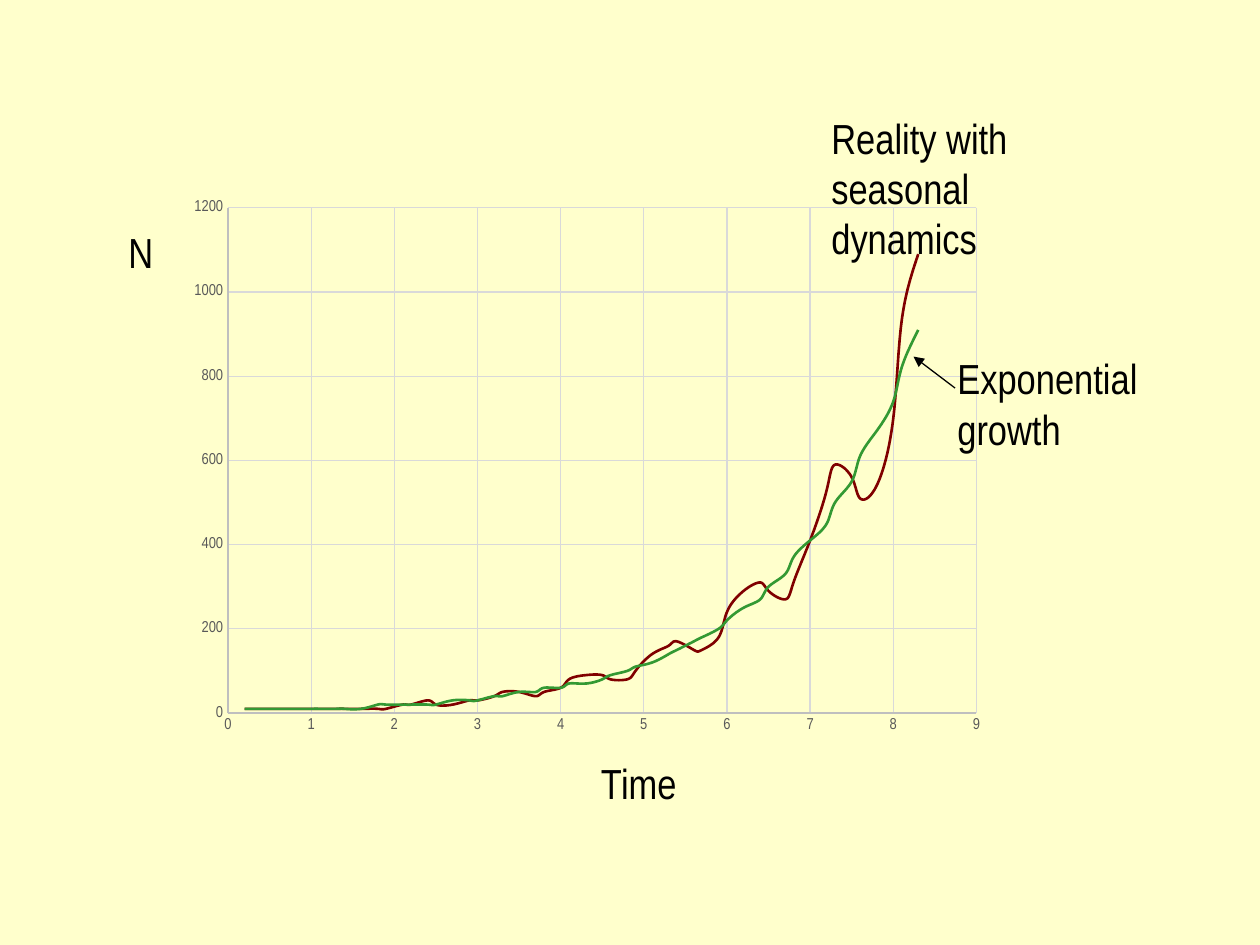
from dataclasses import dataclass
from math import exp, pi, sin

from lxml.etree import SubElement
from pptx import Presentation
from pptx.chart.data import XyChartData
from pptx.dml.color import RGBColor
from pptx.enum.chart import XL_CHART_TYPE, XL_TICK_LABEL_POSITION, XL_TICK_MARK
from pptx.enum.shapes import MSO_CONNECTOR
from pptx.enum.text import MSO_AUTO_SIZE
from pptx.oxml.ns import qn
from pptx.util import Inches, Pt

CREAM = RGBColor(0xFF, 0xFF, 0xCC)
BLACK = RGBColor(0x00, 0x00, 0x00)
GREEN = RGBColor(0x33, 0x99, 0x33)
MAROON = RGBColor(0x80, 0x00, 0x00)
TICK_GRAY = RGBColor(0x59, 0x59, 0x59)
AXIS_GRAY = RGBColor(0xBF, 0xBF, 0xBF)
GRID_GRAY = RGBColor(0xD9, 0xD9, 0xD9)
FONT_NAME = "Arial Narrow"

STEPS = range(1, 53)
START_SIZE = 5
SEASONAL_SWING = 0.2
CHART_WIDTH, CHART_HEIGHT = 6.5, 4.42
PLOT_AREA = {
    "x": 0.39 / CHART_WIDTH,
    "y": 0.15 / CHART_HEIGHT,
    "w": 5.94 / CHART_WIDTH,
    "h": 4.01 / CHART_HEIGHT,
}


@dataclass(frozen=True)
class Label:
    text: str
    left: float
    top: float
    width: float
    height: float


@dataclass(frozen=True)
class Curve:
    name: str
    swing: float
    color: RGBColor


LABELS = [
    Label("Time", 4.67, 5.96, 2.83, 0.5),
    Label("N", 0.92, 1.75, 0.5, 0.5),
    Label("Exponential growth", 7.5, 2.75, 2.08, 0.91),
    Label("Reality with seasonal dynamics", 6.5, 0.84, 2.5, 1.31),
]
CURVES = [
    Curve("Series 1", 0, GREEN),
    Curve("Series 2", SEASONAL_SWING, MAROON),
]


def apply_format(target, values: dict) -> None:
    for attribute, value in values.items():
        setattr(target, attribute, value)


def format_font(font, size: float, color: RGBColor) -> None:
    apply_format(font, {"name": FONT_NAME, "size": Pt(size)})
    font.color.rgb = color


def format_line(line, color: RGBColor, width: float) -> None:
    line.color.rgb = color
    line.width = Pt(width)


def format_axis(axis, maximum: float, unit: float) -> None:
    apply_format(axis, {
        "minimum_scale": 0,
        "maximum_scale": maximum,
        "major_unit": unit,
        "has_title": False,
        "has_major_gridlines": True,
        "major_tick_mark": XL_TICK_MARK.NONE,
        "minor_tick_mark": XL_TICK_MARK.NONE,
        "tick_label_position": XL_TICK_LABEL_POSITION.NEXT_TO_AXIS,
    })
    format_font(axis.tick_labels.font, 9, TICK_GRAY)
    format_line(axis.format.line, AXIS_GRAY, 0.75)
    format_line(axis.major_gridlines.format.line, GRID_GRAY, 0.75)


def place_plot_area(chart) -> None:
    plot_area = chart.plots[0]._element.getparent()
    layout = plot_area.find(qn("c:layout"))
    if layout is None:
        layout = SubElement(plot_area, qn("c:layout"))
        plot_area.insert(0, layout)
    manual = SubElement(layout, qn("c:manualLayout"))
    settings = {"layoutTarget": "inner", "xMode": "edge", "yMode": "edge", **PLOT_AREA}
    for tag, value in settings.items():
        SubElement(manual, qn(f"c:{tag}")).set("val", str(value))


def add_growth_chart(slide) -> None:
    growth = XyChartData()
    for curve in CURVES:
        points = growth.add_series(curve.name)
        for step in STEPS:
            size = START_SIZE * exp(step / 10) * (1 + curve.swing * sin(step))
            points.add_data_point(round(step / (2 * pi), 1), int(round(size, -1)))
    chart = slide.shapes.add_chart(
        XL_CHART_TYPE.XY_SCATTER_SMOOTH_NO_MARKERS,
        Inches(1.42), Inches(1.5), Inches(CHART_WIDTH), Inches(CHART_HEIGHT), growth,
    ).chart
    apply_format(chart, {"has_legend": False, "has_title": False})
    format_font(chart.font, 10, BLACK)
    chart.plots[0].vary_by_categories = False
    for series, curve in zip(chart.plots[0].series, CURVES):
        format_line(series.format.line, curve.color, 1.5)
        series._element.get_or_add_smooth().val = True
    format_axis(chart.category_axis, 9, 1)
    format_axis(chart.value_axis, 1200, 200)
    place_plot_area(chart)


def add_label(slide, label: Label) -> None:
    frame = slide.shapes.add_textbox(
        Inches(label.left), Inches(label.top), Inches(label.width), Inches(label.height)
    ).text_frame
    apply_format(frame, {"word_wrap": True, "auto_size": MSO_AUTO_SIZE.SHAPE_TO_FIT_TEXT})
    run = frame.paragraphs[0].add_run()
    run.text = label.text
    format_font(run.font, 24, BLACK)


def add_pointer(slide) -> None:
    pointer = slide.shapes.add_connector(
        MSO_CONNECTOR.STRAIGHT, Inches(7.58), Inches(3.08), Inches(7.25), Inches(2.83)
    )
    format_line(pointer.line, BLACK, 0.75)
    SubElement(pointer.line._get_or_add_ln(), qn("a:tailEnd")).set("type", "triangle")
    SubElement(pointer._element.spPr, qn("a:effectLst"))


def main() -> None:
    presentation = Presentation()
    apply_format(presentation, {"slide_width": Inches(10), "slide_height": Inches(7.5)})
    slide = presentation.slides.add_slide(presentation.slide_layouts[6])
    slide.background.fill.solid()
    slide.background.fill.fore_color.rgb = CREAM
    add_growth_chart(slide)
    for label in LABELS[:-1]:
        add_label(slide, label)
    add_pointer(slide)
    add_label(slide, LABELS[-1])
    presentation.save("out.pptx")


if __name__ == "__main__":
    main()
